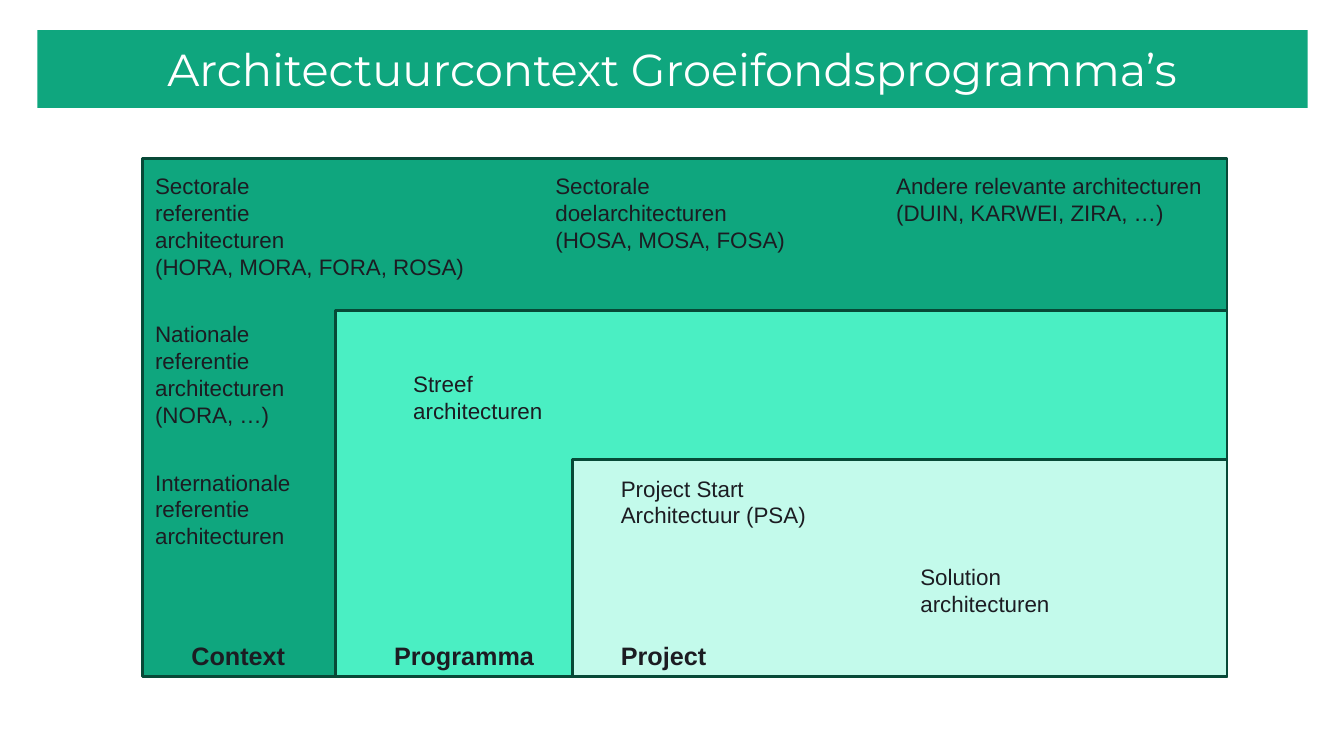
from pptx import Presentation
from pptx.dml.color import RGBColor
from pptx.enum.shapes import MSO_SHAPE
from pptx.enum.text import MSO_ANCHOR, MSO_AUTO_SIZE, PP_ALIGN
from pptx.util import Pt

PX = 9144  # 100 px to the inch
GREEN, MINT, PALE = "0FA67E", "4AEFC3", "C3FAEB"
EDGE, INK, WHITE = "074937", "1C1C22", "FFFFFF"


def paint(color, value):
    color.rgb = RGBColor.from_string(value)


def write(frame, lines, size, color, font="Arial", bold=False):
    for i, line in enumerate(lines):
        para = frame.paragraphs[0] if i == 0 else frame.add_paragraph()
        run = para.add_run()
        run.text = line
        run.font.name = font
        run.font.size = Pt(size)
        run.font.bold = bold
        paint(run.font.color, color)


deck = Presentation()
deck.slide_width, deck.slide_height = 1333 * PX, 750 * PX
slide = deck.slides.add_slide(deck.slide_layouts[6])
shapes = slide.shapes

# Title bar
title = shapes.add_shape(MSO_SHAPE.RECTANGLE, 37 * PX, 30 * PX, 1260 * PX, 77 * PX)
title.shadow.inherit = False
title.fill.solid()
paint(title.fill.fore_color, GREEN)
title.line.fill.background()
frame = title.text_frame
frame.word_wrap = True
frame.vertical_anchor = MSO_ANCHOR.MIDDLE
write(frame, ["Architectuurcontext Groeifondsprogramma’s"], 32, WHITE, "Montserrat")
frame.paragraphs[0].alignment = PP_ALIGN.CENTER

# Nested layers share the bottom right corner
RIGHT, BOTTOM = 1217, 671
for left, top, color in [(141, 157, GREEN), (333, 308, MINT), (568, 456, PALE)]:
    layer = shapes.add_shape(MSO_SHAPE.RECTANGLE, left * PX, top * PX,
                             (RIGHT - left) * PX, (BOTTOM - top) * PX)
    layer.shadow.inherit = False
    layer.fill.solid()
    paint(layer.fill.fore_color, color)
    paint(layer.line.color, EDGE)
    layer.line.width = Pt(2)

# Layer names (18 pt bold) and their contents (16 pt)
labels = [
    (180, 630, 114, 18, ["Context"]),
    (381, 630, 160, 18, ["Programma"]),
    (606, 630, 106, 18, ["Project"]),
    (144, 166, 331, 16, ["Sectorale", "referentie", "architecturen",
                         "(HORA, MORA, FORA, ROSA)"]),
    (144, 313, 150, 16, ["Nationale", "referentie", "architecturen", "(NORA, …)"]),
    (144, 460, 156, 16, ["Internationale", "referentie", "architecturen"]),
    (541, 166, 251, 16, ["Sectorale", "doelarchitecturen", "(HOSA, MOSA, FOSA)"]),
    (879, 166, 327, 16, ["Andere relevante architecturen", "(DUIN, KARWEI, ZIRA, …)"]),
    (400, 362, 150, 16, ["Streef", "architecturen"]),
    (606, 466, 206, 16, ["Project Start", "Architectuur (PSA)"]),
    (903, 554, 150, 16, ["Solution", "architecturen"]),
]
for left, top, width, size, lines in labels:
    high = 40 if size == 18 else 10 + 27 * len(lines)
    box = shapes.add_textbox(left * PX, top * PX, width * PX, high * PX)
    frame = box.text_frame
    frame.word_wrap = False
    frame.auto_size = MSO_AUTO_SIZE.SHAPE_TO_FIT_TEXT
    write(frame, lines, size, INK, bold=size == 18)

deck.save("out.pptx")
